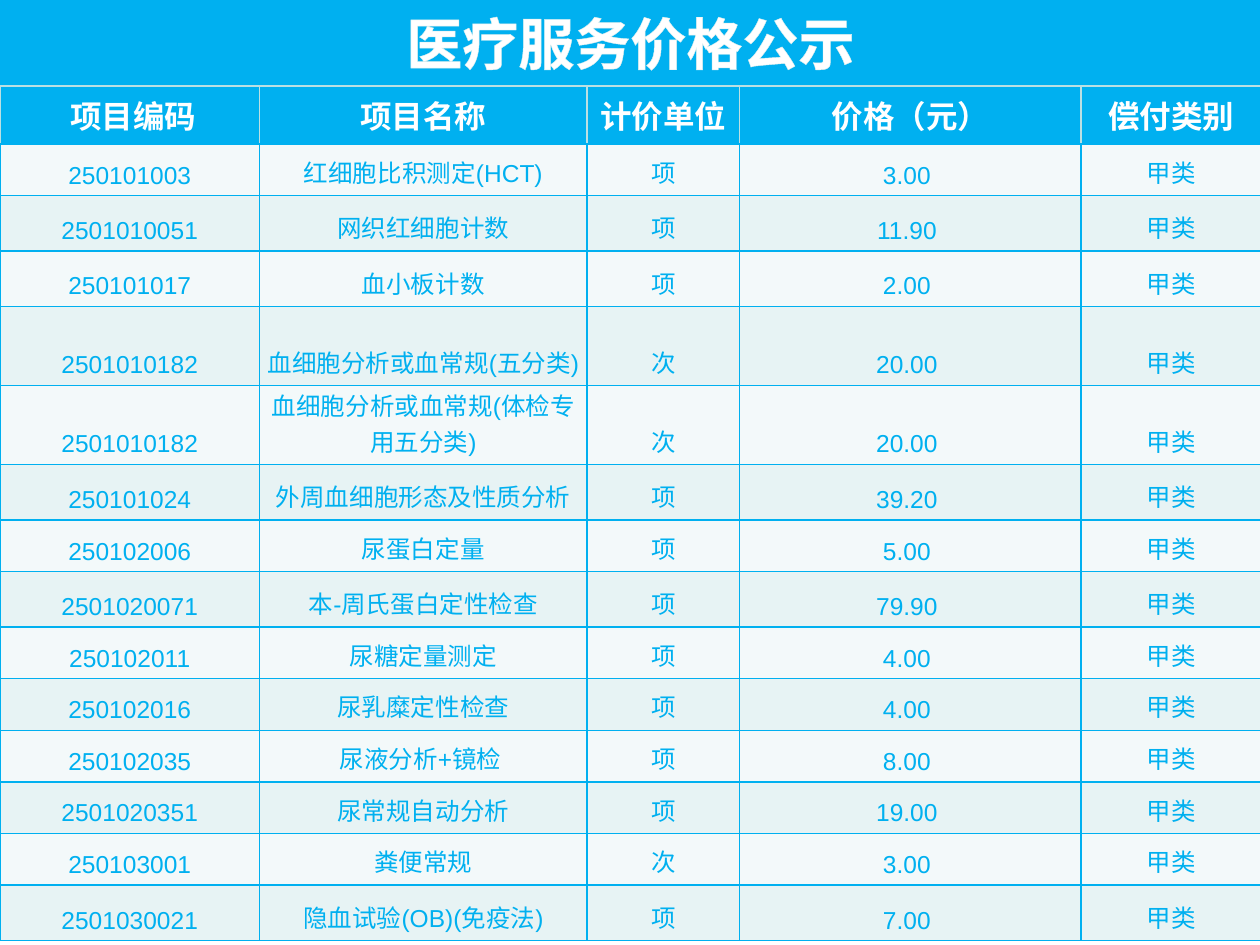
from dataclasses import dataclass

from lxml import etree
from pptx import Presentation
from pptx.dml.color import RGBColor
from pptx.enum.text import MSO_ANCHOR, PP_ALIGN
from pptx.oxml.ns import qn
from pptx.table import _Cell
from pptx.util import Inches, Pt

CENTER = PP_ALIGN.CENTER
TOP, MIDDLE, BOTTOM = MSO_ANCHOR.TOP, MSO_ANCHOR.MIDDLE, MSO_ANCHOR.BOTTOM
BLANK = 6


@dataclass(frozen=True)
class Theme:
    blue: str = "00B0F0"
    white: str = "FFFFFF"
    pale: str = "BBE0E3"
    glow: str = "D9EDEE"
    bands: tuple[str, str] = ("F3F9FA", "E7F3F4")
    font: str = "Arial"
    title: int = 32
    head: int = 18
    body: int = 14
    line: float = 1
    rim: float = 0.8


@dataclass(frozen=True)
class Item:
    code: str
    name: str
    price: str
    unit: str = "项"
    high: float = 0.41
    kind: str = "甲类"

    def texts(self) -> list[str]:
        return [self.code, self.name, self.unit, f"{self.price} ", self.kind]


@dataclass(frozen=True)
class Style:
    size: int
    color: str
    bold: bool
    anchor: MSO_ANCHOR
    edges: dict[str, str]
    tight: bool = False


THEME = Theme()
TALL = 0.44
TITLE = "医疗服务价格公示"
HEADS = [" 项目编码", "项目名称", "计价单位", "价格（元）", "偿付类别"]
COLS = [2.06, 2.6, 1.21, 2.71, 1.43]
TITLE_HIGH, HEAD_HIGH = 0.6, 0.41
ITEMS = [
    Item("250101003", "红细胞比积测定(HCT)", "3.00"),
    Item("2501010051", "网织红细胞计数", "11.90", high=TALL),
    Item("250101017", "血小板计数", "2.00", high=TALL),
    Item("2501010182", "血细胞分析或血常规(五分类)", "20.00", "次", TALL),
    Item("2501010182", "血细胞分析或血常规(体检专用五分类)", "20.00", "次", TALL),
    Item("250101024", "外周血细胞形态及性质分析", "39.20", high=TALL),
    Item("250102006", "尿蛋白定量", "5.00"),
    Item("2501020071", "本-周氏蛋白定性检查", "79.90", high=TALL),
    Item("250102011", "尿糖定量测定", "4.00"),
    Item("250102016", "尿乳糜定性检查", "4.00"),
    Item("250102035", "尿液分析+镜检 ", "8.00"),
    Item("2501020351", "尿常规自动分析", "19.00"),
    Item("250103001", "粪便常规", "3.00", "次"),
    Item("2501030021", "隐血试验(OB)(免疫法)", "7.00", high=TALL),
]

# Edge colours by side, and the three kinds of row
PLAIN = dict.fromkeys("LRTB", THEME.blue)
TITLE_STYLE = Style(THEME.title, THEME.white, True, MIDDLE, {**PLAIN, "B": THEME.pale})
HEAD_STYLE = Style(THEME.head, THEME.white, True, TOP,
                   {**dict.fromkeys("LRT", THEME.pale), "B": THEME.blue})
BODY_STYLE = Style(THEME.body, THEME.blue, False, BOTTOM, PLAIN, tight=True)


def make_line(tag: str, width: float, color: str) -> etree._Element:
    line = etree.Element(qn(tag), w=str(Pt(width)))
    fill = etree.SubElement(line, qn("a:solidFill"))
    etree.SubElement(fill, qn("a:srgbClr"), val=color)
    return line


def paint(cell: _Cell, fill: str, edges: dict[str, str]) -> None:
    cell.fill.solid()
    cell.fill.fore_color.rgb = RGBColor.from_string(fill)
    props = cell._tc.get_or_add_tcPr()
    for spot, (side, color) in enumerate(edges.items()):
        props.insert(spot, make_line(f"a:ln{side}", THEME.line, color))


def write(cell: _Cell, text: str, style: Style) -> None:
    cell.vertical_anchor = style.anchor
    if style.tight:
        cell.margin_left = cell.margin_right = cell.margin_top = Inches(0.01)
        cell.margin_bottom = Inches(0.05)
    cell.text_frame.text = text
    para = cell.text_frame.paragraphs[0]
    para.alignment = CENTER
    font = para.runs[0].font
    font.name, font.size, font.bold = THEME.font, Pt(style.size), style.bold
    font.color.rgb = RGBColor.from_string(style.color)


def main() -> None:
    deck = Presentation()
    deck.slide_width, deck.slide_height = Inches(10), Inches(7.5)
    slide = deck.slides.add_slide(deck.slide_layouts[BLANK])

    # Table grid
    highs = [TITLE_HIGH, HEAD_HIGH] + [item.high for item in ITEMS]
    table = slide.shapes.add_table(len(highs), len(COLS), 0, 0,
                                   Inches(sum(COLS)), Inches(sum(highs))).table
    for col, wide in zip(table.columns, COLS):
        col.width = Inches(wide)
    for row, high in zip(table.rows, highs):
        row.height = Inches(high)

    # Title across all columns, with outlined letters
    for cell in table.rows[0].cells:
        paint(cell, THEME.blue, TITLE_STYLE.edges)
    top = table.cell(0, 0)
    top.merge(table.cell(0, len(COLS) - 1))
    write(top, TITLE, TITLE_STYLE)
    para = top.text_frame.paragraphs[0]
    para.line_spacing = 0.9
    para.runs[0].font._element.insert(0, make_line("a:ln", THEME.rim, THEME.glow))

    # Column heads
    for cell, text in zip(table.rows[1].cells, HEADS):
        paint(cell, THEME.blue, HEAD_STYLE.edges)
        write(cell, text, HEAD_STYLE)

    # Price rows in alternating bands
    for num, item in enumerate(ITEMS):
        for cell, text in zip(table.rows[num + 2].cells, item.texts()):
            paint(cell, THEME.bands[num % 2], BODY_STYLE.edges)
            write(cell, text, BODY_STYLE)

    deck.save("out.pptx")


if __name__ == "__main__":
    main()
